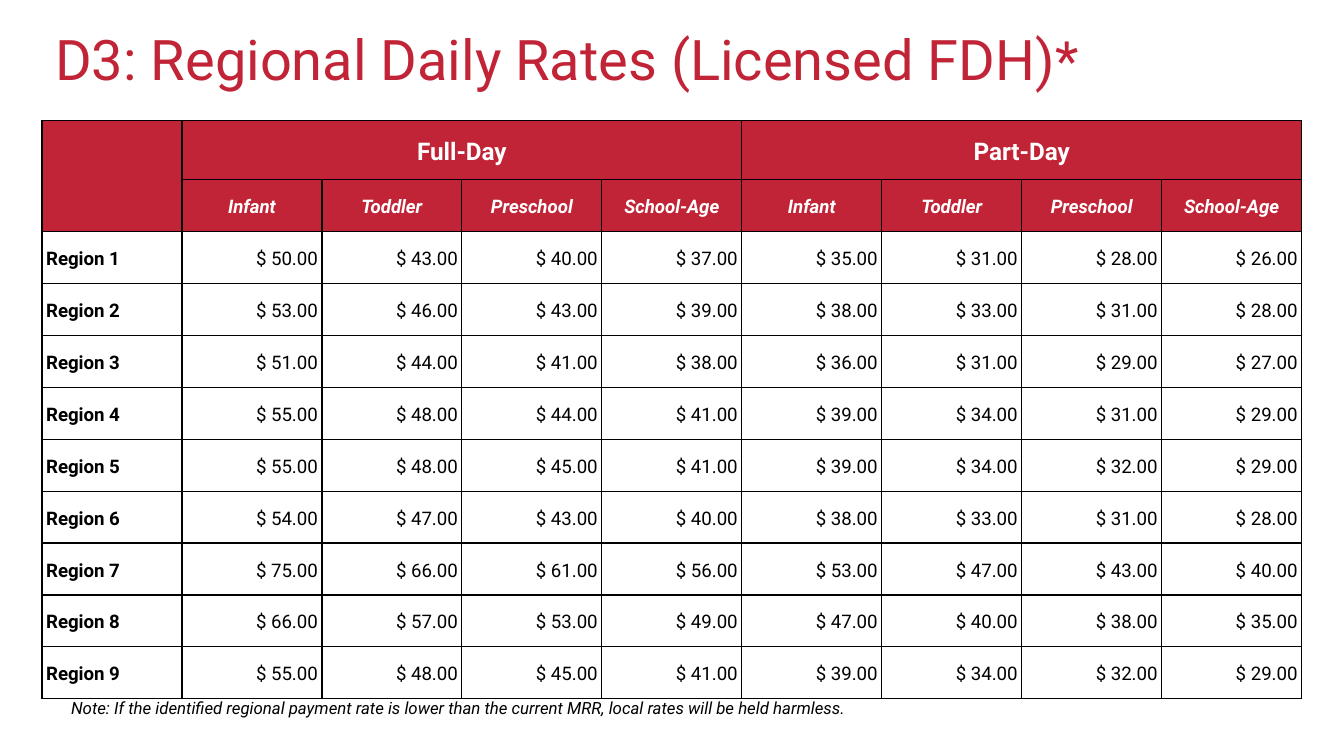
"""Build the slide of regional daily rates (licensed FDH)."""
from lxml.etree import SubElement
from pptx import Presentation
from pptx.dml.color import RGBColor
from pptx.enum.text import MSO_ANCHOR, MSO_AUTO_SIZE, PP_ALIGN
from pptx.oxml.ns import qn
from pptx.util import Pt

RED = RGBColor(0xC1, 0x24, 0x36)
BLACK = RGBColor(0, 0, 0)
WHITE = RGBColor(0xFF, 0xFF, 0xFF)

SESSIONS = ["Full-Day", "Part-Day"]
AGES = ["Infant", "Toddler", "Preschool", "School-Age"]
RATES = [
    [50, 43, 40, 37, 35, 31, 28, 26],
    [53, 46, 43, 39, 38, 33, 31, 28],
    [51, 44, 41, 38, 36, 31, 29, 27],
    [55, 48, 44, 41, 39, 34, 31, 29],
    [55, 48, 45, 41, 39, 34, 32, 29],
    [54, 47, 43, 40, 38, 33, 31, 28],
    [75, 66, 61, 56, 53, 47, 43, 40],
    [66, 57, 53, 49, 47, 40, 38, 35],
    [55, 48, 45, 41, 39, 34, 32, 29],
]


class Deck:
    font = "Roboto"
    border = Pt(0.75)
    col_width = Pt(75)
    head_height = Pt(31.75)
    row_height = Pt(27.75)

    def __init__(self, prs):
        self.s = prs.slides.add_slide(prs.slide_layouts[5])

    def run(self, p, text, size, color, bold=False, italic=False):
        r = p.add_run()
        r.text = text
        f = r.font
        f.name, f.size, f.bold, f.italic = self.font, Pt(size), bold, italic
        f.color.rgb = color

    def frame(self, sp, box, pad_x, pad_y, anchor):
        sp.left, sp.top, sp.width, sp.height = map(Pt, box)
        tf = sp.text_frame
        tf.word_wrap = True
        tf.auto_size = MSO_AUTO_SIZE.NONE
        tf.vertical_anchor = anchor
        tf.margin_left = tf.margin_right = Pt(pad_x)
        tf.margin_top = tf.margin_bottom = Pt(pad_y)
        p = tf.paragraphs[0]
        p.alignment = PP_ALIGN.LEFT
        return p

    def title(self, box, runs):
        p = self.frame(self.s.shapes.title, box, 5.1, 2.6, MSO_ANCHOR.MIDDLE)
        p.line_spacing = 0.9
        for text, size in runs:
            self.run(p, text, size, RED)

    def note(self, box, text):
        sp = self.s.shapes.add_textbox(*map(Pt, box))
        p = self.frame(sp, box, 7.2, 7.2, MSO_ANCHOR.TOP)
        self.run(p, text, 9, BLACK, italic=True)

    def outline(self, cell):
        tc_pr = cell._tc.get_or_add_tcPr()
        for side in ("a:lnL", "a:lnR", "a:lnT", "a:lnB"):
            ln = SubElement(tc_pr, qn(side), w=str(self.border))
            fill = SubElement(ln, qn("a:solidFill"))
            SubElement(fill, qn("a:srgbClr"), val=str(BLACK))

    def cell(self, cell, text, align, size=10, color=BLACK, **style):
        cell.vertical_anchor = MSO_ANCHOR.BOTTOM
        cell.margin_left = cell.margin_right = Pt(2.25)
        cell.margin_top = cell.margin_bottom = Pt(7.2)
        p = cell.text_frame.paragraphs[0]
        p.alignment = align
        p.line_spacing = 1.15
        self.run(p, text, size, color, **style)

    def table(self, left, top):
        rows, cols = len(RATES) + 2, len(SESSIONS) * len(AGES) + 1
        height = self.head_height + self.row_height * (rows - 1)
        t = self.s.shapes.add_table(rows, cols, Pt(left), Pt(top),
                                    self.col_width * cols, height).table
        t.first_row = t.horz_banding = False
        for col in t.columns:
            col.width = self.col_width
        for i, row in enumerate(t.rows):
            row.height = self.row_height if i else self.head_height
            for cell in row.cells:
                self.outline(cell)
                cell.margin_top = cell.margin_bottom = 0
                if i < 2:
                    cell.fill.solid()
                    cell.fill.fore_color.rgb = RED
                else:
                    cell.fill.background()
        t.cell(0, 0).merge(t.cell(1, 0))
        for i, session in enumerate(SESSIONS):
            first = 1 + i * len(AGES)
            t.cell(0, first).merge(t.cell(0, first + len(AGES) - 1))
            self.cell(t.cell(0, first), session, PP_ALIGN.CENTER, 13, WHITE, bold=True)
            for j, age in enumerate(AGES, first):
                self.cell(t.cell(1, j), age, PP_ALIGN.CENTER, color=WHITE,
                          bold=True, italic=True)
        for i, rates in enumerate(RATES, 1):
            self.cell(t.cell(i + 1, 0), f"Region {i}", PP_ALIGN.LEFT, bold=True)
            for j, rate in enumerate(rates, 1):
                self.cell(t.cell(i + 1, j), f"$ {rate:.2f}", PP_ALIGN.RIGHT)


def main():
    prs = Presentation()
    prs.slide_width, prs.slide_height = Pt(720), Pt(405)
    deck = Deck(prs)
    deck.title((24.5, 10.8, 671, 45.4),
               [("D3: Regional Daily Rates (Licensed FDH)", 30), ("*", 29)])
    deck.table(22.5, 64.5)
    deck.note((31, 366.5, 661, 25.2),
              "Note: If the identified regional payment rate is lower than "
              "the current MRR, local rates will be held harmless.")
    prs.save("out.pptx")


if __name__ == "__main__":
    main()
